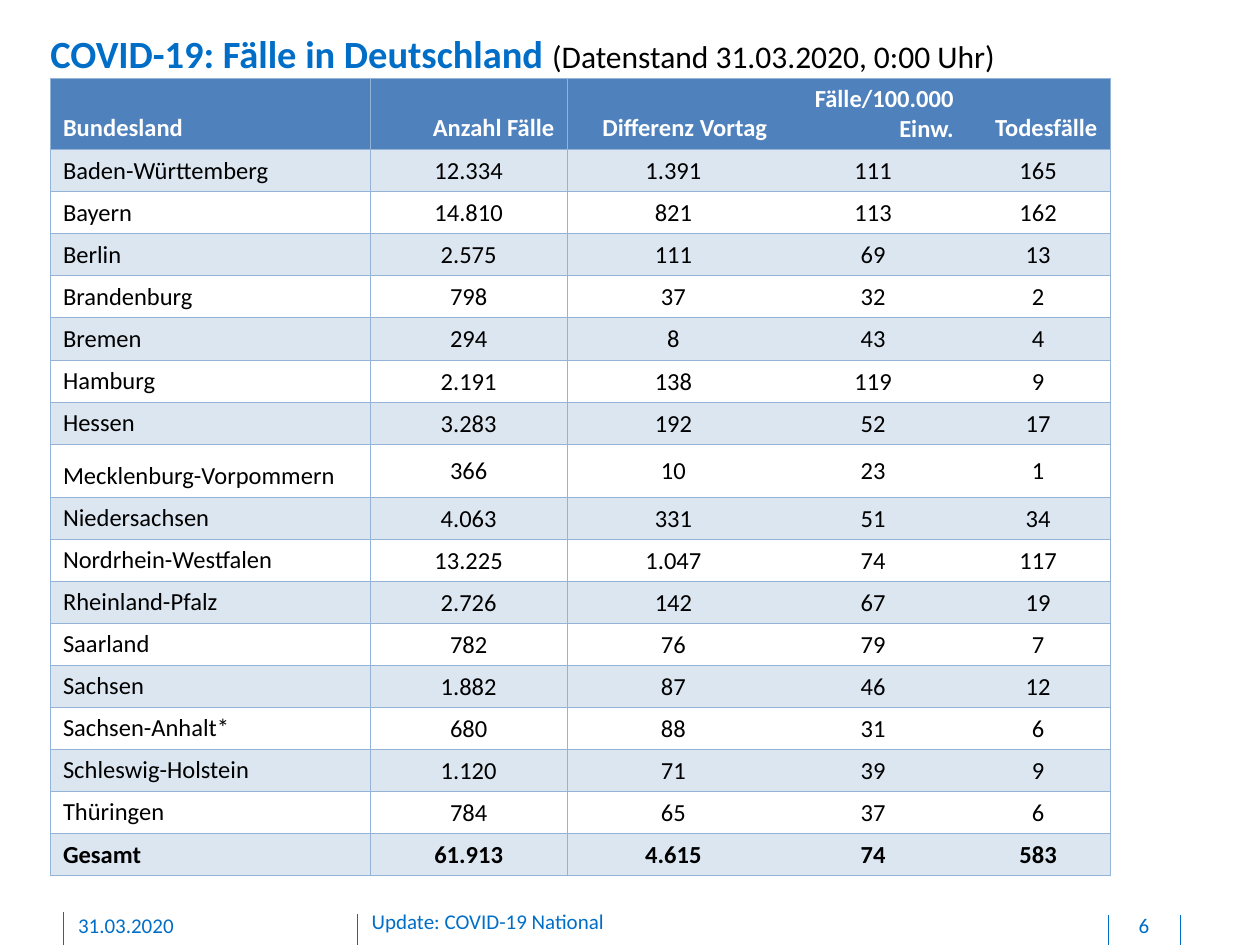
"""Build the slide with COVID-19 case numbers by German federal state."""
from lxml.etree import SubElement
from pptx import Presentation
from pptx.dml.color import RGBColor as RGB
from pptx.enum.shapes import MSO_CONNECTOR as CONN
from pptx.enum.text import MSO_ANCHOR as ANCHOR, MSO_AUTO_SIZE as AUTO, PP_ALIGN as ALIGN
from pptx.oxml import parse_xml
from pptx.oxml.ns import nsdecls, qn
from pptx.util import Inches, Pt

COLORS = {"blue": "006EC7", "header": "4F81BD", "band": "DCE6F1",
          "border": "95B3D7", "white": "FFFFFF", "black": "000000"}
NO_STYLE = "{2D5ABB26-0587-4C30-8999-92F81FD0307C}"
COL_WIDTHS = [2.54, 1.56, 1.69, 1.48, 1.14]
ROWS = [
    ["Bundesland", "Anzahl Fälle", "Differenz Vortag", "Fälle/100.000 Einw.", "Todesfälle"],
    ["Baden-Württemberg", "12.334", "1.391", "111", "165"],
    ["Bayern", "14.810", "821", "113", "162"],
    ["Berlin", "2.575", "111", "69", "13"],
    ["Brandenburg", "798", "37", "32", "2"],
    ["Bremen", "294", "8", "43", "4"],
    ["Hamburg", "2.191", "138", "119", "9"],
    ["Hessen", "3.283", "192", "52", "17"],
    ["Mecklenburg-Vorpommern", "366", "10", "23", "1"],
    ["Niedersachsen", "4.063", "331", "51", "34"],
    ["Nordrhein-Westfalen", "13.225", "1.047", "74", "117"],
    ["Rheinland-Pfalz", "2.726", "142", "67", "19"],
    ["Saarland", "782", "76", "79", "7"],
    ["Sachsen", "1.882", "87", "46", "12"],
    ["Sachsen-Anhalt*", "680", "88", "31", "6"],
    ["Schleswig-Holstein", "1.120", "71", "39", "9"],
    ["Thüringen", "784", "65", "37", "6"],
    ["Gesamt", "61.913", "4.615", "74", "583"],
]
LAST_ROW, LAST_COL = len(ROWS) - 1, len(COL_WIDTHS) - 1


def add_run(p, text, size, color, bold=False):
    r = p.add_run()
    r.text = text
    for name, value in {"name": "Calibri", "size": Pt(size), "bold": bold}.items():
        setattr(r.font, name, value)
    r.font.color.rgb = RGB.from_string(COLORS[color])


def set_borders(cell, sides):
    for side in sides:
        cell._tc.get_or_add_tcPr().append(parse_xml(
            f'<a:ln{side} {nsdecls("a")} w="{Pt(0.5)}"><a:solidFill>'
            f'<a:srgbClr val="{COLORS["border"]}"/></a:solidFill></a:ln{side}>'))


prs = Presentation()
prs.slide_width, prs.slide_height = Inches(10), Inches(7.5)
s = prs.slides.add_slide(prs.slide_layouts[5])

for x, top in [(2.84, 7.25), (0.5, 7.24), (9.37, 7.26), (8.8, 7.26)]:
    line = s.shapes.add_connector(CONN.STRAIGHT, Inches(x), Inches(top), Inches(x), Inches(7.5))
    line.line.color.rgb = RGB.from_string(COLORS["blue"])
    line.line.width = Pt(0.5)
    SubElement(line._element.spPr, qn("a:effectLst"))

title = s.shapes.title
for name, value in {"left": 0.4, "top": 0.24, "width": 8.85, "height": 0.37}.items():
    setattr(title, name, Inches(value))
tf = title.text_frame
for name, value in {"margin_left": 0, "margin_top": 0, "margin_right": 0, "margin_bottom": 0,
                    "word_wrap": True, "auto_size": AUTO.SHAPE_TO_FIT_TEXT,
                    "vertical_anchor": ANCHOR.MIDDLE}.items():
    setattr(tf, name, value)
p = tf.paragraphs[0]
p.alignment = ALIGN.LEFT
add_run(p, "COVID-19: Fälle in Deutschland ", 22, "blue", True)
add_run(p, "(Datenstand 31.03.2020, 0:00 Uhr)", 18, "black")

frame = s.shapes.add_table(len(ROWS), len(COL_WIDTHS), Inches(0.4), Inches(0.62),
                           Inches(8.42), Inches(6.32))
table = frame.table
table.first_row = table.horz_banding = False
table._tbl.tblPr.find(qn("a:tableStyleId")).text = NO_STYLE
for col, width in zip(table.columns, COL_WIDTHS):
    col.width = Inches(width)

for i, values in enumerate(ROWS):
    header = i == 0
    table.rows[i].height = Inches({0: 0.49, 8: 0.42}.get(i, 0.29))
    for j, text in enumerate(values):
        cell = table.cell(i, j)
        set_borders(cell, {0: "LRTB", 1: "LTB", LAST_COL: "RTB"}.get(j, "TB"))
        if header or i % 2:
            cell.fill.solid()
            cell.fill.fore_color.rgb = RGB.from_string(COLORS["header" if header else "band"])
        else:
            cell.fill.background()
        cell.vertical_anchor = ANCHOR.BOTTOM
        p = cell.text_frame.paragraphs[0]
        if j:
            p.alignment = ALIGN.RIGHT if header else ALIGN.CENTER
        if j and not header:
            cell.vertical_anchor = ANCHOR.MIDDLE
            cell.margin_left = cell.margin_right = cell.margin_top = Inches(0.01)
            cell.margin_bottom = 0
        add_run(p, text, 14, "white" if header else "black", i in (0, LAST_ROW))
frame.height = Inches(6.32)

for text, left, top, width, align in [
    ("31.03.2020", 0.62, 7.24, 2.03, ALIGN.LEFT),
    ("Update: COVID-19 National", 2.95, 7.21, 5.67, ALIGN.LEFT),
    ("6", 8.81, 7.24, 0.54, ALIGN.CENTER),
]:
    sp = s.shapes.add_textbox(Inches(left), Inches(top), Inches(width), Inches(0.21))
    tf = sp.text_frame
    for name, value in {"margin_left": 0, "margin_top": 0, "margin_right": 0,
                        "margin_bottom": Inches(0.05), "word_wrap": True}.items():
        setattr(tf, name, value)
    p = tf.paragraphs[0]
    p.alignment = align
    add_run(p, text, 12, "blue")

prs.save("out.pptx")
